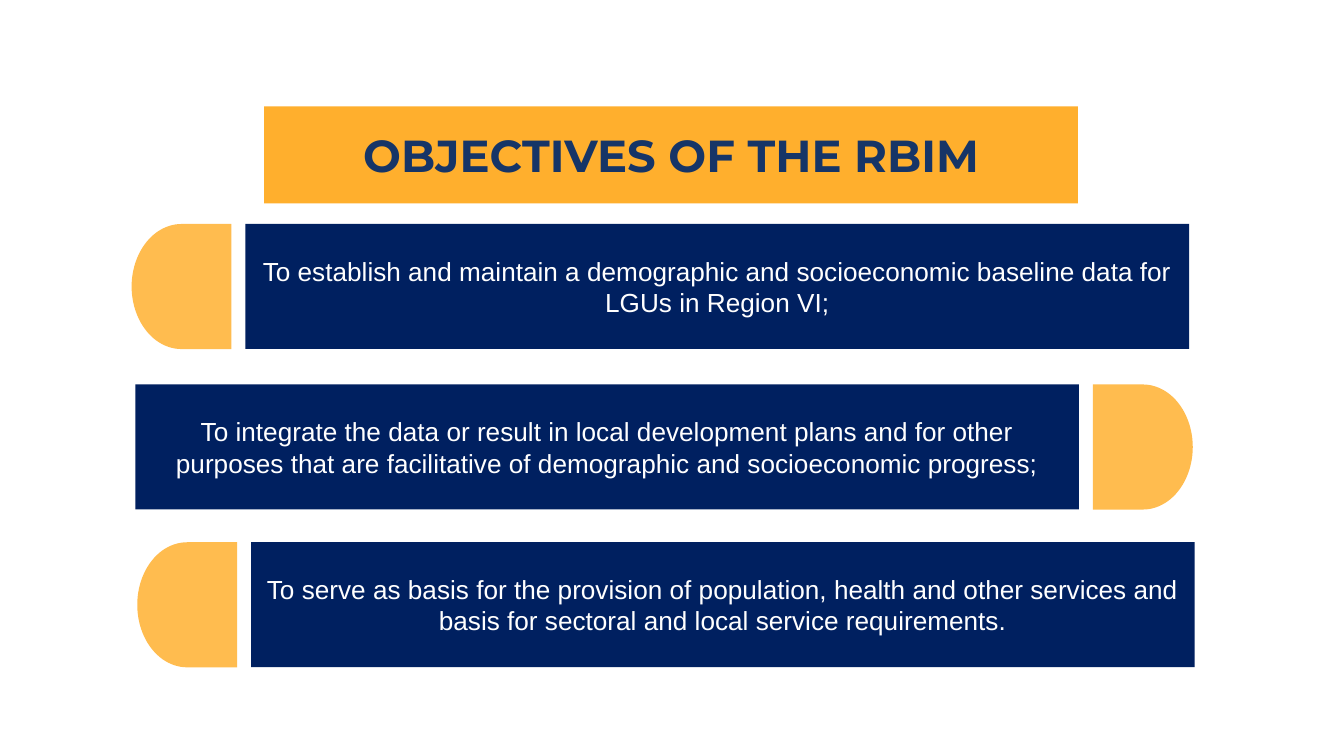
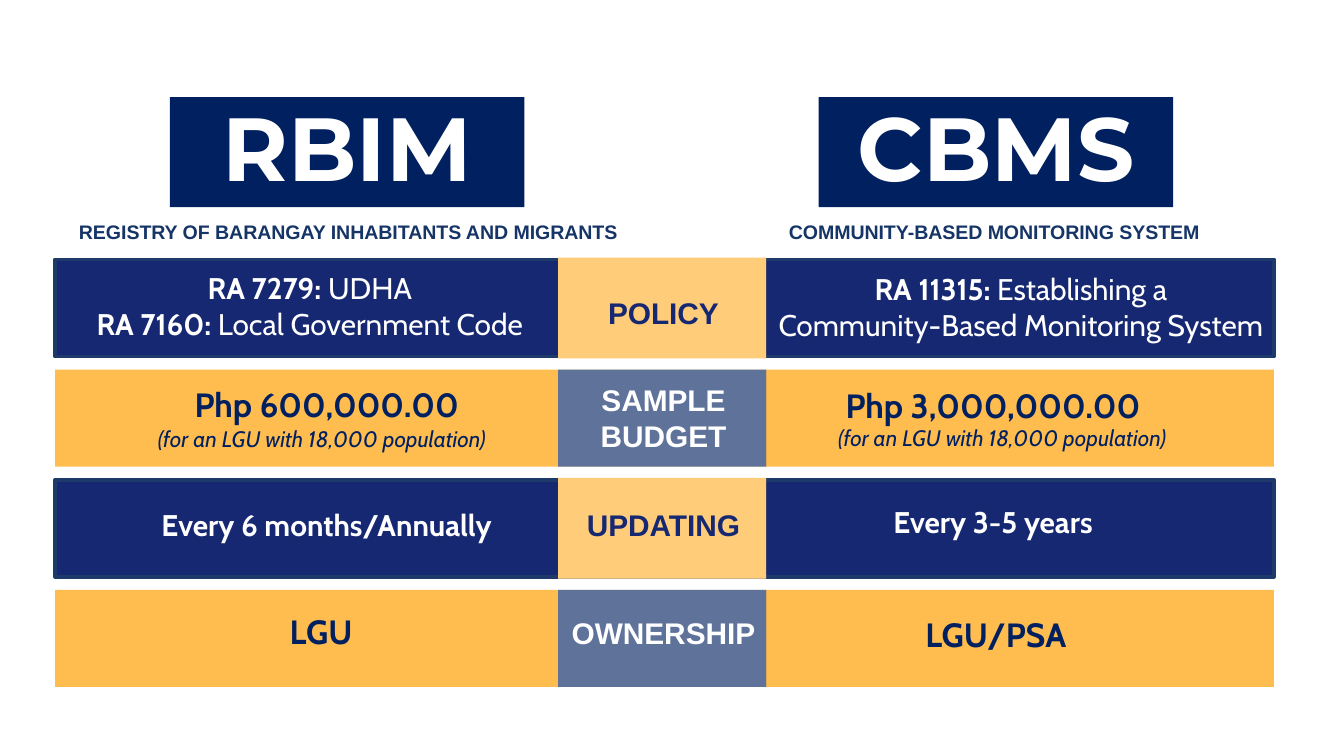
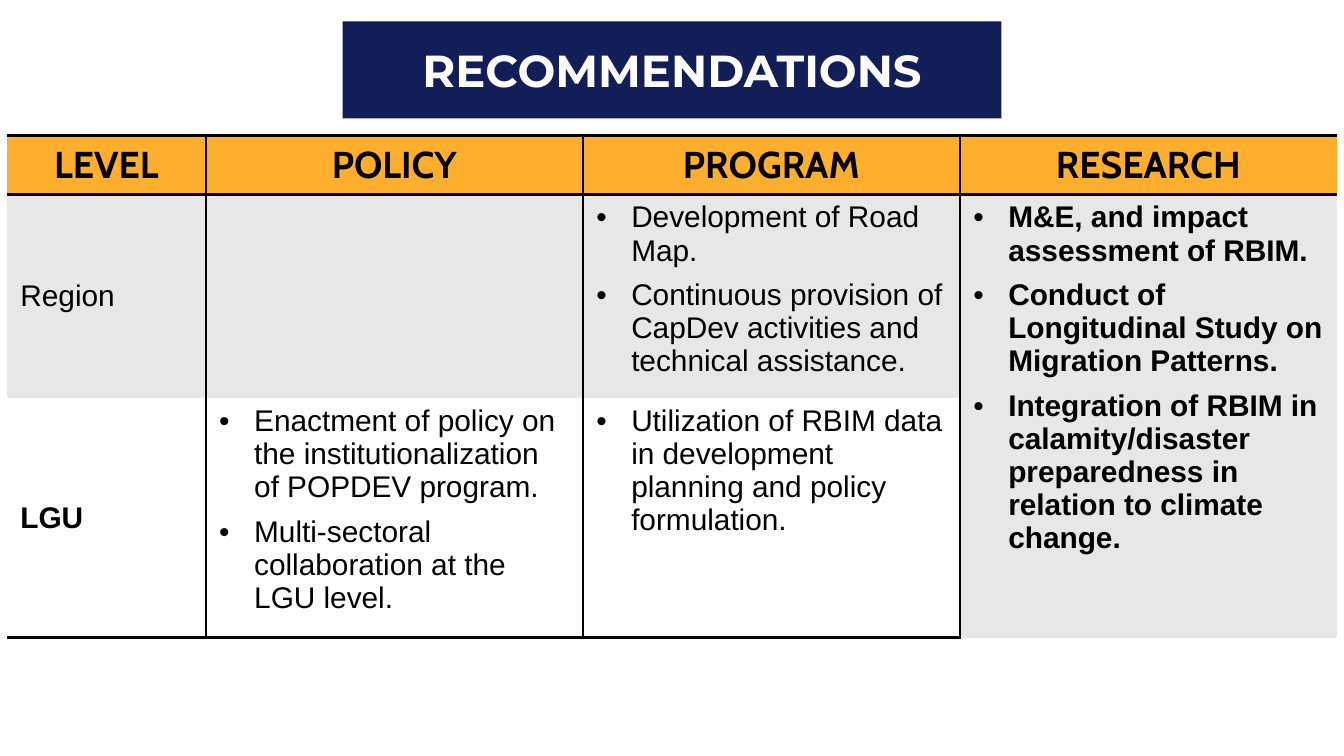
from lxml import etree
from pptx import Presentation
from pptx.dml.color import RGBColor
from pptx.enum.shapes import MSO_SHAPE
from pptx.enum.text import MSO_ANCHOR, MSO_AUTO_SIZE, PP_ALIGN
from pptx.oxml.ns import qn
from pptx.util import Pt

RECT, DELAY = MSO_SHAPE.RECTANGLE, MSO_SHAPE.FLOWCHART_DELAY
TOP, MIDDLE, BOTTOM = MSO_ANCHOR.TOP, MSO_ANCHOR.MIDDLE, MSO_ANCHOR.BOTTOM
LEFT, CENTER = PP_ALIGN.LEFT, PP_ALIGN.CENTER
FIXED = MSO_AUTO_SIZE.NONE

WHITE = RGBColor(0xFF, 0xFF, 0xFF)
BLACK = RGBColor(0, 0, 0)
NAVY = RGBColor(0x00, 0x20, 0x60)
ROYAL = RGBColor(0x16, 0x28, 0x72)
DEEP = RGBColor(0x11, 0x1E, 0x57)
SLATE = RGBColor(0x16, 0x35, 0x67)
EDGE = RGBColor(0x1D, 0x3A, 0x6B)
ORANGE = RGBColor(0xFF, 0xAF, 0x2D)
AMBER = RGBColor(0xFF, 0xBC, 0x4F)
GREY = RGBColor(0xE7, 0xE7, 0xE7)

HEAD, BODY, PLAIN = "Montserrat", "Cabin", "Arial"

GOALS = [
    "To establish and maintain a demographic and socioeconomic baseline data "
    "for LGUs in Region VI;",
    "To integrate the data or result in local development plans and for other "
    "purposes that are facilitative of demographic and socioeconomic progress;",
    "To serve as basis for the provision of population, health and other "
    "services and basis for sectoral and local service requirements.",
]
GOAL_SPOTS = [(70.5, 131.5, 120), (585.5, 72.5, 206), (73.5, 134.5, 290.5)]

TOPICS = [
    (["POLICY"], 154.5),
    (["SAMPLE", "BUDGET"], 201),
    (["UPDATING"], 268),
    (["OWNERSHIP"], 326),
]
FACTS = [
    ([("RA 7279:", " UDHA"), ("RA 7160:", " Local Government Code")],
     (31.5, 141, 269, 46), 16, WHITE),
    ([("RA 11315: ", "Establishing a"),
      ("", "Community-Based Monitoring System")],
     (399, 141.5, 296, 46), 16, WHITE),
    (["Php 600,000.00"], (43, 202, 264, 29), 18, NAVY),
    (["Php 3,000,000.00"], (381, 202.5, 302, 29), 18, NAVY),
    (["Every 6 months/Annually"], (45.5, 268, 259, 27), 16, WHITE),
    (["Every 3-5 years"], (381, 266.5, 302, 27), 16, WHITE),
    (["LGU"], (57, 324, 230, 29), 18, NAVY),
    (["LGU/PSA"], (382.5, 325.5, 302, 29), 18, NAVY),
]

HEADS = ["LEVEL", "POLICY", "PROGRAM", "RESEARCH"]
ROWS = [
    ["Region", [],
     ["Development of Road Map.",
      "Continuous provision of CapDev activities and technical assistance."],
     ["M&E, and impact assessment of RBIM.",
      "Conduct of Longitudinal Study on Migration Patterns.",
      "Integration of RBIM in calamity/disaster preparedness in relation to "
      "climate change."]],
    ["LGU",
     ["Enactment of policy on the institutionalization of POPDEV program.",
      "Multi-sectoral collaboration at the LGU level."],
     ["Utilization of RBIM data in development planning and policy "
      "formulation."],
     []],
]


def bullet(para):
    props = para._p.get_or_add_pPr()
    props.set("marL", str(Pt(18.75)))
    props.set("indent", str(Pt(-18.75)))
    tint = etree.SubElement(props, qn("a:buClr"))
    etree.SubElement(tint, qn("a:srgbClr")).set("val", str(BLACK))
    etree.SubElement(props, qn("a:buFont")).set("typeface", PLAIN)
    etree.SubElement(props, qn("a:buChar")).set("char", "•")


def write(frame, lines, size, color, name=PLAIN, bold=False, italic=False,
          align=CENTER, space=None, dots=False):
    for i, line in enumerate(lines):
        para = frame.paragraphs[0] if i == 0 else frame.add_paragraph()
        if dots:
            bullet(para)
            para.space_after = Pt(6)
        para.alignment = align
        if space:
            para.line_spacing = space
        font = para.font
        font.name, font.size, font.color.rgb = name, Pt(size), color
        font.italic = italic
        if isinstance(line, tuple):
            for text, heavy in zip(line, (True, False)):
                if text:
                    run = para.add_run()
                    run.text, run.font.bold = text, heavy
        else:
            font.bold = bold
            para.add_run().text = line


def block(slide, box, fill, kind=RECT, edge=None):
    shape = slide.shapes.add_shape(kind, *map(Pt, box))
    shape.shadow.inherit = False
    shape.fill.solid()
    shape.fill.fore_color.rgb = fill
    if edge:
        shape.line.color.rgb = edge
        shape.line.width = Pt(2)
    else:
        shape.line.fill.background()
    return shape


def label(slide, lines, box, size, color, anchor=TOP, **style):
    frame = slide.shapes.add_textbox(*map(Pt, box)).text_frame
    frame.word_wrap = True
    frame.vertical_anchor = anchor
    write(frame, lines, size, color, **style)


def banner(shape, text, size, color, anchor, base=3.6):
    frame = shape.text_frame
    frame.auto_size = FIXED
    frame.word_wrap = True
    frame.vertical_anchor = anchor
    frame.margin_bottom = Pt(base)
    write(frame, [text], size, color, HEAD, bold=True,
          space=0.9 if anchor == BOTTOM else 1)


def title(slide, text, box, fill, size, color, anchor, base=3.6):
    shape = slide.shapes.title
    shape.left, shape.top, shape.width, shape.height = map(Pt, box)
    shape.fill.solid()
    shape.fill.fore_color.rgb = fill
    banner(shape, text, size, color, anchor, base)


def goals(slide):
    title(slide, "OBJECTIVES OF THE RBIM", (141.5, 57, 436, 52), ORANGE,
          24, SLATE, BOTTOM, 11.5)
    for text, (tab, bar, top) in zip(GOALS, GOAL_SPOTS):
        cap = block(slide, (tab, top, 53.5, 67), AMBER, DELAY)
        cap.rotation = 180 if tab < bar else 0
        frame = block(slide, (bar, top, 505.5, 67), NAVY).text_frame
        frame.word_wrap = True
        frame.vertical_anchor = MIDDLE
        write(frame, [text], 14, WHITE)


def versus(slide):
    title(slide, "RBIM", (91, 52, 190, 59), NAVY, 48, WHITE, BOTTOM)
    rival = block(slide, (438.5, 52, 190, 59), NAVY)
    banner(rival, "CBMS", 48, WHITE, BOTTOM)
    names = ["REGISTRY OF BARANGAY INHABITANTS AND MIGRANTS",
             "COMMUNITY-BASED MONITORING SYSTEM"]
    for text, left in zip(names, (19, 365)):
        label(slide, [text], (left, 114.5, 335.5, 19.5), 10.5, SLATE,
              BOTTOM, bold=True, space=0.9)

    for i in range(len(TOPICS)):
        top, dark = 139 + 59 * i, i % 2 == 0
        block(slide, (29.5, top, 653, 52), ROYAL if dark else AMBER,
              edge=EDGE if dark else None)
        grow = 1 if dark else 0
        block(slide, (299, top - grow, 111.5, 52 + 2 * grow),
              ORANGE if dark else NAVY)
    for lines, box, size, color in FACTS:
        label(slide, lines, box, size, color, name=BODY, bold=True)
    for left, top in ((21.5, 224), (386, 223.5)):
        label(slide, ["(for an LGU with 18,000 population)"],
              (left, top, 302, 22), 12, NAVY, name=BODY, italic=True)

    veil = block(slide, (299, 134, 111.5, 235), WHITE)
    tint = next(veil._element.spPr.iter(qn("a:srgbClr")))
    etree.SubElement(tint, qn("a:alpha")).set("val", "37000")
    for i, (lines, top) in enumerate(TOPICS):
        label(slide, lines, (293, top, 125, 27 * len(lines)), 16,
              WHITE if i % 2 else ROYAL, bold=True)


def rule(cell, side, width):
    line = etree.SubElement(cell._tc.get_or_add_tcPr(), qn("a:ln" + side))
    if width:
        line.set("w", str(Pt(width)))
        fill = etree.SubElement(line, qn("a:solidFill"))
        etree.SubElement(fill, qn("a:srgbClr")).set("val", str(BLACK))
    else:
        etree.SubElement(line, qn("a:noFill"))


def dress(cell, row, col, fill):
    rule(cell, "L", 1 if col > 0 else 0)
    rule(cell, "R", 1 if col < 3 else 0)
    rule(cell, "T", 2 if row < 2 else 0)
    rule(cell, "B", 2 if row != 1 else 0)
    cell.fill.solid()
    cell.fill.fore_color.rgb = fill


def advice(slide):
    title(slide, "RECOMMENDATIONS", (183.5, 11.5, 353, 52), DEEP, 24,
          WHITE, MIDDLE)
    grid = slide.shapes.add_table(3, 4, Pt(3.75), Pt(72.5), Pt(712.5),
                                  Pt(268.5)).table
    grid.horz_banding = False
    for col, width in zip(grid.columns, (106.5, 202, 202, 202)):
        col.width = Pt(width)
    for row, height in zip(grid.rows, (31, 109, 128.5)):
        row.height = Pt(height)
    for r, fill in enumerate((ORANGE, GREY, WHITE)):
        for c in range(4):
            dress(grid.cell(r, c), r, c, fill)
    grid.cell(1, 3).merge(grid.cell(2, 3))
    for c, text in enumerate(HEADS):
        cell = grid.cell(0, c)
        cell.vertical_anchor = MIDDLE
        write(cell.text_frame, [text], 20, BLACK, BODY, bold=True)
    for r, (level, *lists) in enumerate(ROWS, 1):
        cell = grid.cell(r, 0)
        cell.vertical_anchor = MIDDLE
        write(cell.text_frame, [level], 16, BLACK, bold=r == 2, align=LEFT)
        for c, items in enumerate(lists, 1):
            write(grid.cell(r, c).text_frame, items, 16, BLACK,
                  bold=c == 3, align=LEFT, dots=True)


def main():
    deck = Presentation()
    deck.slide_width, deck.slide_height = Pt(720), Pt(405)
    for build in (goals, versus, advice):
        build(deck.slides.add_slide(deck.slide_layouts[5]))
    deck.save("out.pptx")


if __name__ == "__main__":
    main()
